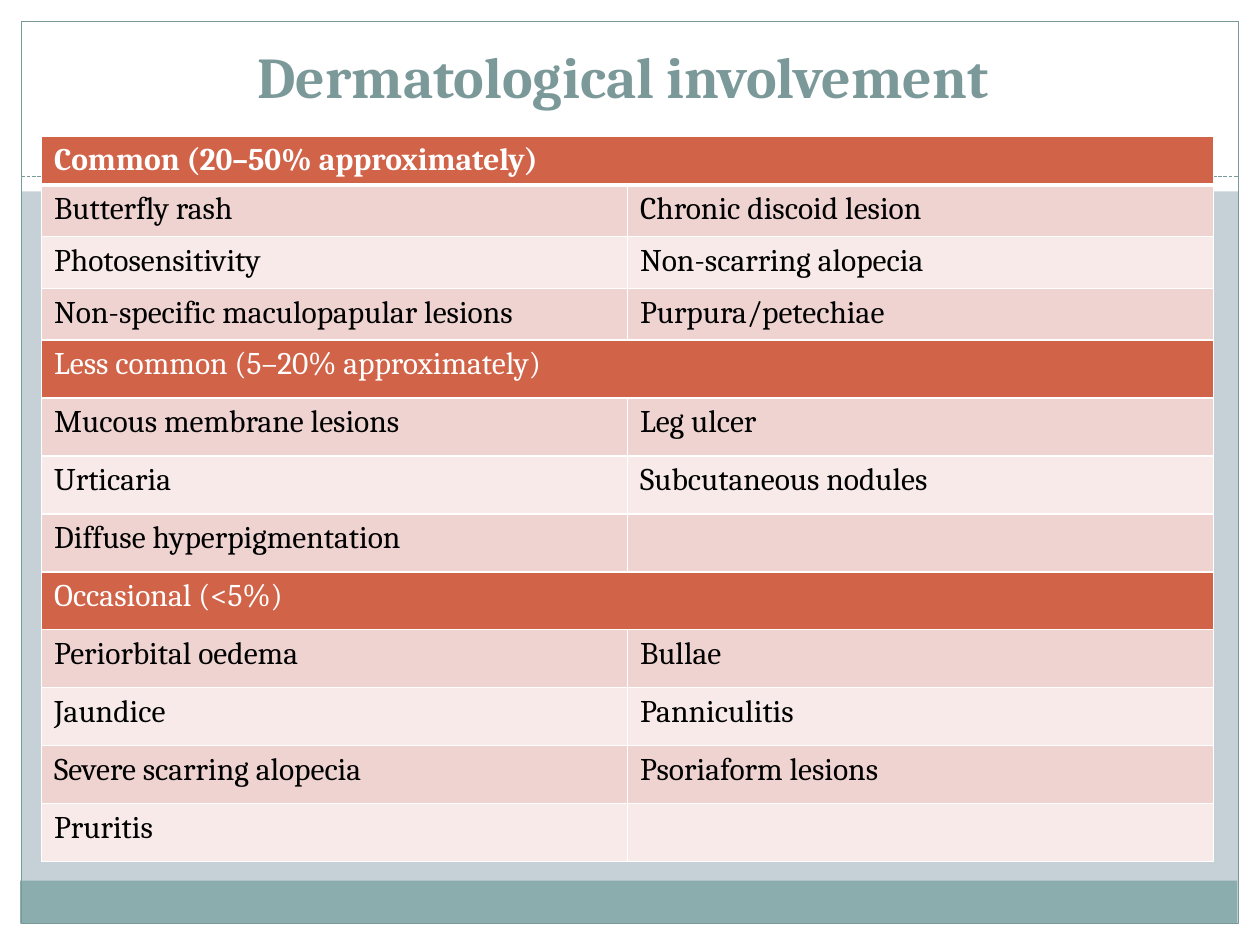
from typing import NamedTuple

from lxml.etree import SubElement
from pptx import Presentation
from pptx.dml.color import RGBColor
from pptx.enum.dml import MSO_LINE
from pptx.enum.shapes import MSO_CONNECTOR, MSO_SHAPE
from pptx.enum.text import MSO_ANCHOR, PP_ALIGN
from pptx.oxml import parse_xml
from pptx.oxml.ns import nsdecls, qn
from pptx.util import Emu, Pt

PX = 9144
FONT = "Cambria"
WHITE, BLACK = "FFFFFF", "000000"
BACKGROUND, BAND, ACCENT = "C5D1D7", "8CADAE", "7C999A"
HEADING_FILL = "D16349"
ROW_FILLS = ("EED3D0", "F7EAE9")


class Panel(NamedTuple):
    left: int
    top: int
    width: int
    height: int
    fill: str | None = WHITE
    line: str | None = None


class Group(NamedTuple):
    heading: str
    heading_height: int
    row_height: int
    rows: list[tuple[str, str]]


PANELS = [
    Panel(0, 733, 1000, 17),
    Panel(0, 0, 1000, 152),
    Panel(0, 0, 17, 750),
    Panel(983, 0, 17, 750),
    Panel(16, 699, 966, 34, BAND),
    Panel(17, 17, 966, 716, None, ACCENT),
]

GROUPS = [
    Group("Common (20–50% approximately)", 33, 41, [
        ("Butterfly rash", "Chronic discoid lesion"),
        ("Photosensitivity", "Non-scarring alopecia"),
        ("Non-specific maculopapular lesions", "Purpura/petechiae"),
    ]),
    Group("Less common (5–20% approximately)", 46, 46, [
        ("Mucous membrane lesions", "Leg ulcer"),
        ("Urticaria", "Subcutaneous nodules"),
        ("Diffuse hyperpigmentation", ""),
    ]),
    Group("Occasional (<5%)", 46, 46, [
        ("Periorbital oedema", "Bullae"),
        ("Jaundice", "Panniculitis"),
        ("Severe scarring alopecia", "Psoriaform lesions"),
        ("Pruritis", ""),
    ]),
]


def px(length: int) -> Emu:
    """Turn a length in px into EMU."""
    return Emu(length * PX)


def color(value: str) -> RGBColor:
    """Turn a hex string into a colour."""
    return RGBColor.from_string(value)


def paint(fill, value: str) -> None:
    """Give a fill one solid colour."""
    fill.solid()
    fill.fore_color.rgb = color(value)


def format_text(text_frame, size: int, value: str, bold: bool) -> None:
    """Format every run of a text frame."""
    for paragraph in text_frame.paragraphs:
        for run in paragraph.runs:
            run.font.name = FONT
            run.font.size = Pt(size)
            run.font.bold = bold
            run.font.color.rgb = color(value)


def draw_panel(slide, panel: Panel) -> None:
    """Draw a rectangle of the slide's frame."""
    shape = slide.shapes.add_shape(MSO_SHAPE.RECTANGLE, *map(px, panel[:4]))
    shape.shadow.inherit = False
    if panel.fill:
        paint(shape.fill, panel.fill)
    else:
        shape.fill.background()
    if panel.line:
        shape.line.color.rgb = color(panel.line)
        shape.line.width = Pt(0.75)
    else:
        shape.line.fill.background()


def draw_divider(slide) -> None:
    """Draw the dashed line under the title area."""
    connector = slide.shapes.add_connector(
        MSO_CONNECTOR.STRAIGHT, px(17), px(140), px(983), px(140))
    connector.line.color.rgb = color(ACCENT)
    connector.line.width = Pt(0.75)
    connector.line.dash_style = MSO_LINE.SQUARE_DOT
    SubElement(connector.element.spPr, qn("a:effectLst"))


def place_title(slide) -> None:
    """Fill the title placeholder and bring it in front of the frame."""
    title = slide.shapes.title
    title.left, title.top, title.width, title.height = map(px, (33, 25, 933, 67))
    text_frame = title.text_frame
    text_frame.text = "Dermatological involvement "
    text_frame.word_wrap = True
    text_frame.vertical_anchor = MSO_ANCHOR.BOTTOM
    text_frame.paragraphs[0].alignment = PP_ALIGN.CENTER
    format_text(text_frame, 33, ACCENT, True)
    title.element.getparent().append(title.element)


def set_borders(cell, top: int = 1, bottom: int = 1) -> None:
    """Give a cell white borders, with widths in points."""
    properties = cell._tc.get_or_add_tcPr()
    widths = {"lnL": 1, "lnR": 1, "lnT": top, "lnB": bottom}
    for position, (side, width) in enumerate(widths.items()):
        border = parse_xml(
            f'<a:{side} {nsdecls("a")} w="{Pt(width)}"><a:solidFill>'
            f'<a:srgbClr val="{WHITE}"/></a:solidFill></a:{side}>')
        properties.insert(position, border)


def fill_row(table, index: int, height: int, texts: tuple[str, str],
             fill: str, text_color: str) -> None:
    """Set the height, text, fill and borders of one table row."""
    table.rows[index].height = px(height)
    for cell, text in zip(table.rows[index].cells, texts):
        cell.text = text
        format_text(cell.text_frame, 18, text_color, index == 0)
        paint(cell.fill, fill)
        set_borders(cell, 3 if index == 1 else 1, 3 if index == 0 else 1)


def draw_table(slide) -> None:
    """Draw the table of skin signs grouped by frequency."""
    row_count = sum(1 + len(group.rows) for group in GROUPS)
    frame = slide.shapes.add_table(
        row_count, 2, px(33), px(108), px(930), px(579))
    table = frame.table
    table.first_row = table.horz_banding = False
    index = 0
    for group in GROUPS:
        fill_row(table, index, group.heading_height, (group.heading, ""),
                 HEADING_FILL, WHITE)
        table.cell(index, 0).merge(table.cell(index, 1))
        for offset, texts in enumerate(group.rows):
            fill_row(table, index + 1 + offset, group.row_height, texts,
                     ROW_FILLS[offset % 2], BLACK)
        index += 1 + len(group.rows)


def main() -> None:
    """Build and save the slide."""
    presentation = Presentation()
    presentation.slide_width, presentation.slide_height = px(1000), px(750)
    slide = presentation.slides.add_slide(presentation.slide_layouts[5])
    paint(slide.background.fill, BACKGROUND)
    for panel in PANELS:
        draw_panel(slide, panel)
    draw_divider(slide)
    place_title(slide)
    draw_table(slide)
    presentation.save("out.pptx")


if __name__ == "__main__":
    main()
